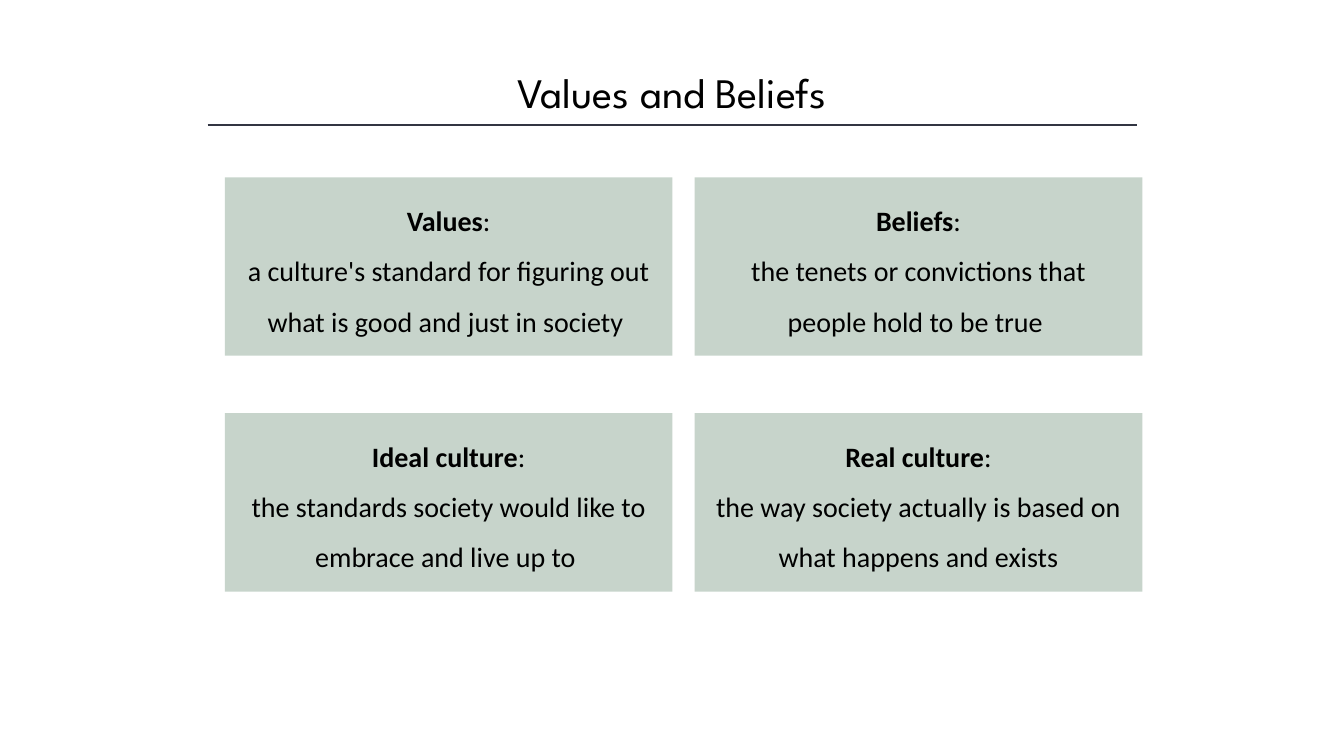
from lxml import etree
from pptx import Presentation
from pptx.dml.color import RGBColor
from pptx.enum.shapes import MSO_CONNECTOR, MSO_SHAPE
from pptx.enum.text import MSO_ANCHOR, PP_ALIGN
from pptx.oxml.ns import qn
from pptx.util import Inches, Pt

RECT = MSO_SHAPE.RECTANGLE
LINE = MSO_CONNECTOR.STRAIGHT
CENTER = PP_ALIGN.CENTER
MIDDLE = MSO_ANCHOR.MIDDLE

TITLE = "Values and Beliefs"
CARDS = [
    ("Values", "a culture's standard for figuring out what is good and just in society "),
    ("Beliefs", "the tenets or convictions that people hold to be true "),
    ("Ideal culture", "the standards society would like to embrace and live up to "),
    ("Real culture", "the way society actually is based on what happens and exists"),
]
COLORS = {"text": "000000", "rule": "323542", "card": "C7D4CB"}
HEAD_FONT, BODY_FONT = "League Spartan", "Calibri"

WIDE, HIGH = 13.33, 7.5
COLS = 2
LEFT, TOP = 2.23, 1.76
CARD_W, CARD_H = 4.44, 1.77
GAP_X, GAP_Y = 0.22, 0.57
PAD_X, PAD_Y = 0.07, 0.06
TEXT_H = 1.56


def color(name):
    return RGBColor.from_string(COLORS[name])


def box(x, y, w, h):
    return [Inches(v) for v in (x, y, w, h)]


def add_run(para, text, font, size, bold=False):
    run = para.add_run()
    run.text = text
    run.font.name = font
    run.font.size = Pt(size)
    run.font.bold = bold
    run.font.color.rgb = color("text")


def add_rect(group, x, y, w, h):
    rect = group.shapes.add_shape(RECT, *box(x, y, w, h))
    rect.shadow.inherit = False
    rect.fill.solid()
    rect.fill.fore_color.rgb = color("card")
    rect.line.fill.background()
    return rect


def add_card(slide, x, y, term, text):
    group = slide.shapes.add_group_shape()
    add_rect(group, x, y, CARD_W, CARD_H)
    label = add_rect(group, x + PAD_X, y + PAD_Y, CARD_W - 2 * PAD_X, TEXT_H)
    frame = label.text_frame
    frame.word_wrap = True
    frame.vertical_anchor = MIDDLE
    para = frame.paragraphs[0]
    para.alignment = CENTER
    para.line_spacing = 1.5
    add_run(para, term, BODY_FONT, 20, True)
    add_run(para, ":", BODY_FONT, 20)
    para.add_line_break()
    add_run(para, text, BODY_FONT, 20)


def add_head(slide):
    title = slide.shapes.add_textbox(*box((WIDE - 10) / 2, 0.61, 10, 0.61))
    title.text_frame.word_wrap = True
    para = title.text_frame.paragraphs[0]
    para.alignment = CENTER
    add_run(para, TITLE, HEAD_FONT, 30)
    rule = slide.shapes.add_connector(LINE, *box(2.06, 1.24, 11.28, 1.24))
    rule.line.color.rgb = color("rule")
    rule.line.width = Pt(1)
    etree.SubElement(rule._element.spPr, qn("a:effectLst"))


def main():
    deck = Presentation()
    deck.slide_width, deck.slide_height = Inches(WIDE), Inches(HIGH)
    slide = deck.slides.add_slide(deck.slide_layouts[6])
    add_head(slide)
    for i, (term, text) in enumerate(CARDS):
        row, col = divmod(i, COLS)
        x = LEFT + col * (CARD_W + GAP_X)
        y = TOP + row * (CARD_H + GAP_Y)
        add_card(slide, x, y, term, text)
    deck.save("out.pptx")


if __name__ == "__main__":
    main()
